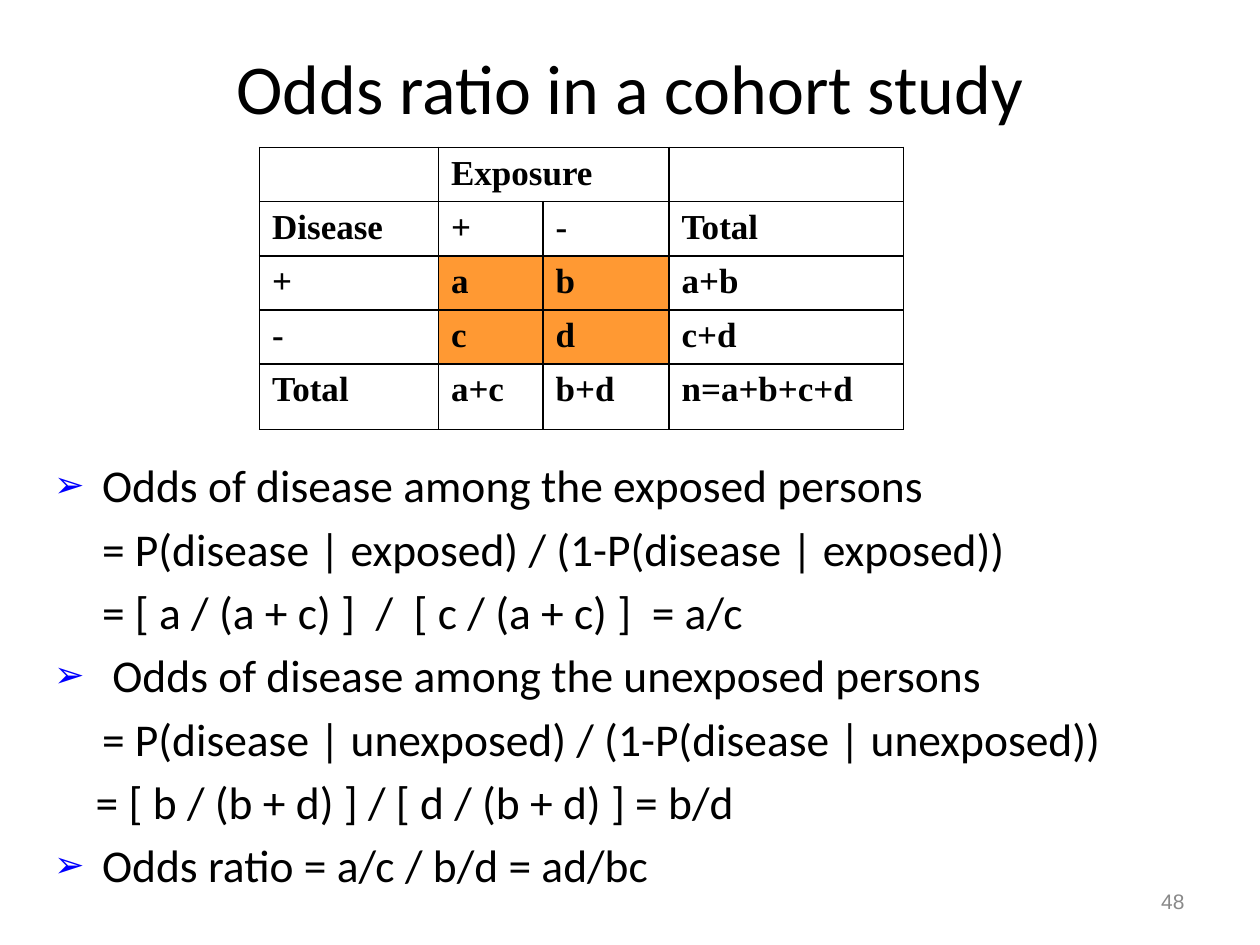
"""Build the slide on the odds ratio in a cohort study."""
from lxml.etree import SubElement
from pptx import Presentation
from pptx.dml.color import RGBColor
from pptx.enum.text import MSO_ANCHOR, MSO_AUTO_SIZE, PP_ALIGN
from pptx.oxml.ns import qn
from pptx.util import Inches, Pt

COLORS = {"text": "000000", "bullet": "0000FF", "cell": "FF9933", "number": "898989"}


def style(para, name, size, color="text", bold=False):
    para.font.name = name
    para.font.size = Pt(size)
    para.font.bold = bold
    para.font.color.rgb = RGBColor.from_string(COLORS[color])


def add_element(parent, tag, **attributes):
    return SubElement(parent, qn(tag), attributes)


deck = Presentation()
deck.slide_width, deck.slide_height = Inches(10), Inches(7.5)
page = deck.slides.add_slide(deck.slide_layouts[1])

title = page.shapes.title
title.left, title.top, title.width, title.height = map(Inches, (0.5, 0.3, 9, 0.78))
title.text_frame.text = "Odds ratio in a cohort study"
title.text_frame.auto_size = MSO_AUTO_SIZE.NONE
title.text_frame.vertical_anchor = MSO_ANCHOR.MIDDLE
title.text_frame.paragraphs[0].alignment = PP_ALIGN.CENTER
style(title.text_frame.paragraphs[0], "Calibri", 40)

body_lines = [
    ("Odds of disease among the exposed persons", True, 0.38),
    ("= P(disease | exposed) / (1-P(disease | exposed))", False, 0.38),
    ("= [ a / (a + c) ]  /  [ c / (a + c) ]  = a/c", False, 0.38),
    (" Odds of disease among the unexposed persons", True, 0.38),
    ("= P(disease | unexposed) / (1-P(disease | unexposed))", False, 0.38),
    ("= [ b / (b + d) ] / [ d / (b + d) ] = b/d", False, 0.33),
    ("Odds ratio = a/c / b/d = ad/bc", True, 0.38),
]
body = page.placeholders[1]
body.left, body.top, body.width, body.height = map(Inches, (0.33, 3.58, 9.67, 1.25))
frame = body.text_frame
frame.text = "\n".join(line for line, _, _ in body_lines)
frame.auto_size = MSO_AUTO_SIZE.NONE
frame.vertical_anchor = MSO_ANCHOR.TOP
for para, (_, bulleted, margin) in zip(frame.paragraphs, body_lines):
    properties = para._p.get_or_add_pPr()
    properties.set("marL", str(Inches(margin)))
    properties.set("indent", str(-Inches(margin) if bulleted else 0))
    if bulleted:
        bullet_color = add_element(properties, "a:buClr")
        add_element(bullet_color, "a:srgbClr", val=COLORS["bullet"])
        add_element(properties, "a:buSzPct", val="80000")
        add_element(properties, "a:buFont", typeface="Arial")
        add_element(properties, "a:buChar", char="➢")
    else:
        add_element(properties, "a:buNone")
    para.space_before = Pt(5)
    style(para, "Calibri", 26)

rows = [
    ["", "Exposure", "", ""],
    ["Disease", "+", "-", "Total"],
    ["+", "a", "b", "a+b"],
    ["-", "c", "d", "c+d"],
    ["Total", "a+c", "b+d", "n=a+b+c+d"],
]
table = page.shapes.add_table(
    5, 4, Inches(2.06), Inches(1.17), Inches(5.11), Inches(2.24)
).table
table.first_row = table.horz_banding = False
for column, width in zip(table.columns, (1.42, 0.83, 1, 1.86)):
    column.width = Inches(width)
for row, height in zip(table.rows, (0.43, 0.43, 0.43, 0.43, 0.52)):
    row.height = Inches(height)
for r, words in enumerate(rows):
    for c, word in enumerate(words):
        cell = table.cell(r, c)
        cell.text = word
        style(cell.text_frame.paragraphs[0], "Times New Roman", 20, bold=True)
        cell_properties = cell._tc.get_or_add_tcPr()
        for side in ("a:lnL", "a:lnR", "a:lnT", "a:lnB"):
            border = add_element(cell_properties, side, w=str(Pt(1)))
            border_fill = add_element(border, "a:solidFill")
            add_element(border_fill, "a:srgbClr", val=COLORS["text"])
        if r in (2, 3) and c in (1, 2):
            cell.fill.solid()
            cell.fill.fore_color.rgb = RGBColor.from_string(COLORS["cell"])
        else:
            cell.fill.background()
table.cell(0, 1).merge(table.cell(0, 2))

number = page.shapes.add_textbox(Inches(7.17), Inches(6.95), Inches(2.33), Inches(0.4))
number.text_frame.word_wrap = True
number.text_frame.vertical_anchor = MSO_ANCHOR.MIDDLE
number.text_frame.text = "48"
number.text_frame.paragraphs[0].alignment = PP_ALIGN.RIGHT
style(number.text_frame.paragraphs[0], "Arial", 12, "number")

deck.save("out.pptx")
